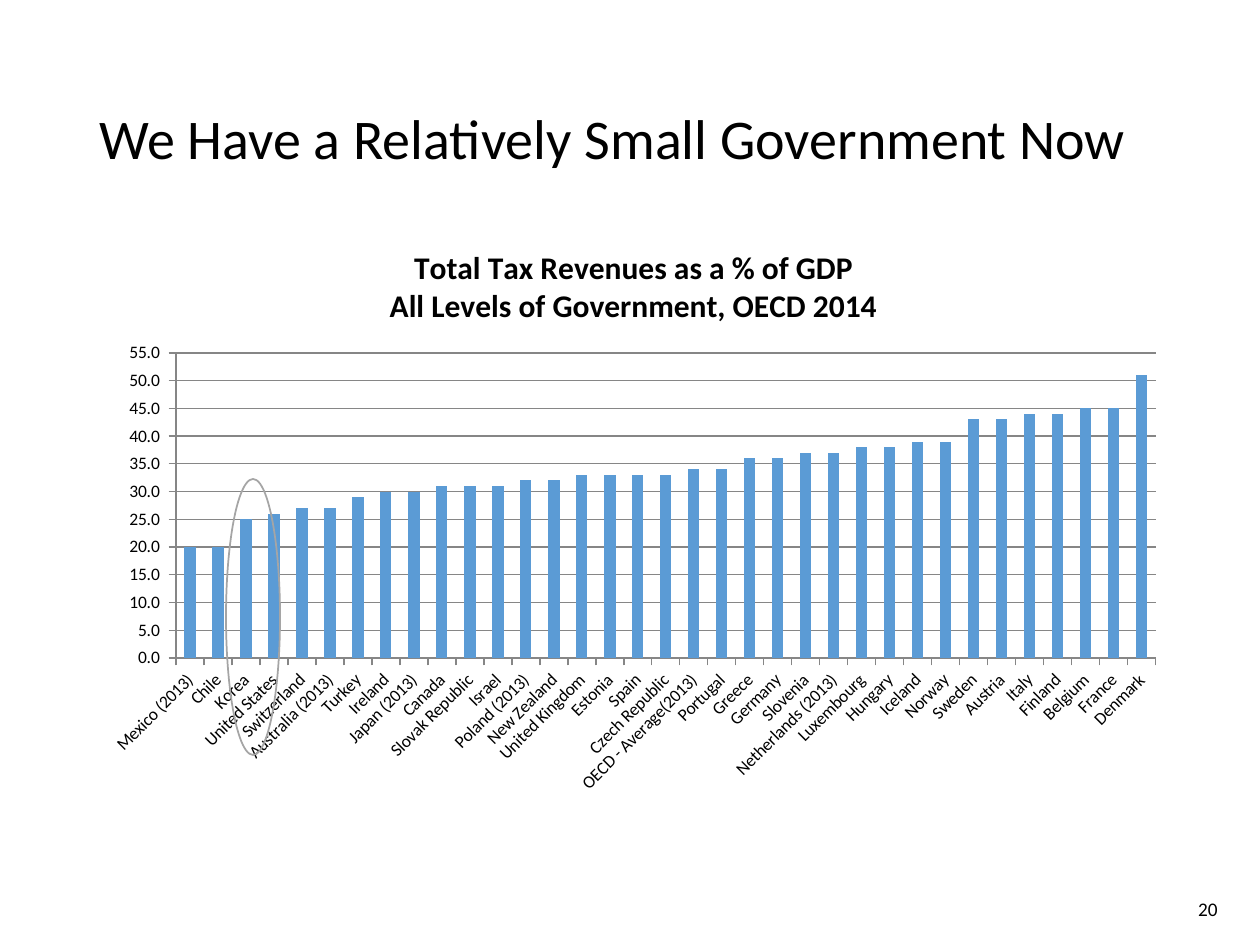
from dataclasses import dataclass

from lxml.etree import SubElement
from pptx import Presentation
from pptx.chart.data import CategoryChartData
from pptx.dml.color import RGBColor
from pptx.enum.chart import XL_CHART_TYPE, XL_TICK_MARK
from pptx.enum.shapes import MSO_SHAPE
from pptx.enum.text import MSO_ANCHOR, MSO_AUTO_SIZE, PP_ALIGN
from pptx.oxml import parse_xml
from pptx.oxml.ns import nsdecls, qn
from pptx.util import Emu, Pt

FONT = "Calibri"
BLACK = RGBColor(0x00, 0x00, 0x00)
BLUE = RGBColor(0x5B, 0x9B, 0xD5)
GREY = RGBColor(0xA5, 0xA5, 0xA5)
AXIS_GREY = RGBColor(0x86, 0x86, 0x86)

PIXELS_PER_INCH = 126

TAX_REVENUES = {
    "Mexico (2013)": 20, "Chile": 20, "Korea": 25, "United States": 26,
    "Switzerland": 27, "Australia (2013)": 27, "Turkey": 29,
    "Ireland": 30, "Japan (2013)": 30, "Canada": 31,
    "Slovak Republic": 31, "Israel": 31, "Poland (2013)": 32,
    "New Zealand": 32, "United Kingdom": 33, "Estonia": 33, "Spain": 33,
    "Czech Republic": 33, "OECD - Average(2013)": 34, "Portugal": 34,
    "Greece": 36, "Germany": 36, "Slovenia": 37,
    "Netherlands (2013)": 37, "Luxembourg": 38, "Hungary": 38,
    "Iceland": 39, "Norway": 39, "Sweden": 43, "Austria": 43,
    "Italy": 44, "Finland": 44, "Belgium": 45, "France": 45,
    "Denmark": 51,
}
CHART_TITLE = (
    "Total Tax Revenues as a % of GDP",
    "All Levels of Government, OECD 2014",
)


def px(pixels: int) -> Emu:
    return Emu(round(pixels * 914400 / PIXELS_PER_INCH))


@dataclass(frozen=True)
class Box:
    left: int
    top: int
    width: int
    height: int

    def emu(self) -> tuple[Emu, ...]:
        return px(self.left), px(self.top), px(self.width), px(self.height)


TITLE_BOX = Box(87, 50, 1086, 183)
CHART_BOX = Box(91, 224, 1086, 581)
NUMBER_BOX = Box(1163, 895, 67, 28)
HIGHLIGHT_BOX = Box(226, 479, 54, 276)


def add_run(paragraph, text: str, size: int, bold: bool = False) -> None:
    run = paragraph.add_run()
    run.text = text
    run.font.name = FONT
    run.font.size = Pt(size)
    run.font.bold = bold
    run.font.color.rgb = BLACK


def set_layout(parent, index: int, **pixels: int) -> None:
    for existing in parent.findall(qn("c:layout")):
        parent.remove(existing)
    layout = parse_xml(f"<c:layout {nsdecls('c')}/>")
    manual = SubElement(layout, qn("c:manualLayout"))
    if "w" in pixels:
        SubElement(manual, qn("c:layoutTarget")).set("val", "inner")
    for side in ("x", "y"):
        SubElement(manual, qn(f"c:{side}Mode")).set("val", "edge")
    for name, length in pixels.items():
        whole = CHART_BOX.width if name in ("x", "w") else CHART_BOX.height
        SubElement(manual, qn(f"c:{name}")).set("val", str(length / whole))
    parent.insert(index, layout)


def add_title(slide) -> None:
    title = slide.shapes.title
    title.left, title.top, title.width, title.height = TITLE_BOX.emu()
    frame = title.text_frame
    frame.word_wrap = True
    frame.auto_size = MSO_AUTO_SIZE.NONE
    frame.vertical_anchor = MSO_ANCHOR.MIDDLE
    paragraph = frame.paragraphs[0]
    paragraph.alignment = PP_ALIGN.LEFT
    paragraph.line_spacing = 0.9
    add_run(paragraph, "We Have a Relatively Small Government Now", 32)


def add_chart_title(chart) -> None:
    frame = chart.chart_title.text_frame
    for index, line in enumerate(CHART_TITLE):
        paragraph = frame.add_paragraph() if index else frame.paragraphs[0]
        add_run(paragraph, line, 18, bold=True)
    chart.chart_title.include_in_layout = False
    set_layout(chart._chartSpace.chart.find(qn("c:title")), 1, x=295, y=19)


def format_axes(chart) -> None:
    value_axis, category_axis = chart.value_axis, chart.category_axis
    for axis in (value_axis, category_axis):
        axis.major_tick_mark = XL_TICK_MARK.OUTSIDE
        axis.minor_tick_mark = XL_TICK_MARK.NONE
        axis.format.line.color.rgb = AXIS_GREY
        axis.tick_labels.font.size = Pt(10)
    value_axis.minimum_scale = 0
    value_axis.maximum_scale = 55
    value_axis.major_unit = 5
    value_axis.has_major_gridlines = True
    value_axis.major_gridlines.format.line.color.rgb = AXIS_GREY
    value_axis.tick_labels.number_format = r"#,##0.0_ ;\-#,##0.0\ "
    value_axis.tick_labels.number_format_is_linked = False
    labels = category_axis._element.find(qn("c:txPr")).find(qn("a:bodyPr"))
    labels.set("rot", "-2700000")
    labels.set("vert", "horz")


def add_revenue_chart(slide) -> None:
    data = CategoryChartData()
    data.categories = list(TAX_REVENUES)
    data.add_series("Series 1", TAX_REVENUES.values())
    chart = slide.shapes.add_chart(
        XL_CHART_TYPE.COLUMN_CLUSTERED, *CHART_BOX.emu(), data
    ).chart
    chart.has_legend = False
    chart.font.name = FONT
    chart.font.size = Pt(10)
    chart.font.color.rgb = BLACK
    plot = chart.plots[0]
    plot.gap_width = 150
    plot.vary_by_categories = False
    fill = plot.series[0].format.fill
    fill.solid()
    fill.fore_color.rgb = BLUE
    add_chart_title(chart)
    format_axes(chart)
    plot_area = chart._chartSpace.chart.plotArea
    set_layout(plot_area, 0, x=85, y=129, w=980, h=305)


def add_slide_number(slide) -> None:
    frame = slide.shapes.add_textbox(*NUMBER_BOX.emu()).text_frame
    frame.word_wrap = True
    frame.vertical_anchor = MSO_ANCHOR.MIDDLE
    paragraph = frame.paragraphs[0]
    paragraph.alignment = PP_ALIGN.RIGHT
    add_run(paragraph, "20", 11)


def add_highlight(slide) -> None:
    ellipse = slide.shapes.add_shape(MSO_SHAPE.OVAL, *HIGHLIGHT_BOX.emu())
    ellipse.shadow.inherit = False
    ellipse.fill.background()
    ellipse.line.color.rgb = GREY
    ellipse.line.width = Pt(1)


def main() -> None:
    """Build the slide on government size and save it."""
    presentation = Presentation()
    presentation.slide_width = px(1260)
    presentation.slide_height = px(945)
    slide = presentation.slides.add_slide(presentation.slide_layouts[5])
    add_title(slide)
    add_revenue_chart(slide)
    add_slide_number(slide)
    add_highlight(slide)
    presentation.save("out.pptx")


if __name__ == "__main__":
    main()
